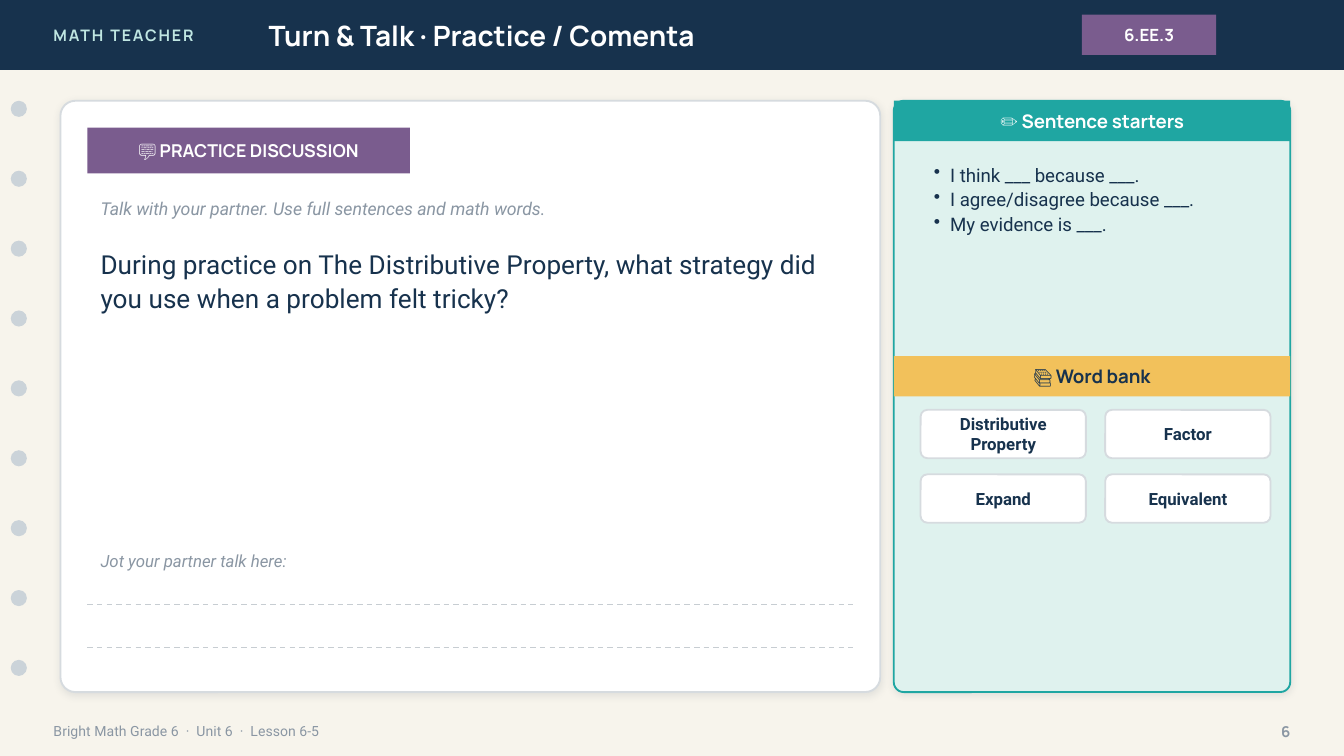
from lxml import etree
from pptx import Presentation
from pptx.dml.color import RGBColor
from pptx.enum import dml, shapes, text
from pptx.oxml import ns
from pptx.util import Pt

NAVY = RGBColor(0x17, 0x32, 0x4D)
CREAM = RGBColor(0xF7, 0xF4, 0xEC)
MINT = RGBColor(0xBF, 0xE6, 0xE2)
PALE = RGBColor(0xDF, 0xF2, 0xEE)
TEAL = RGBColor(0x1F, 0xA6, 0xA2)
PLUM = RGBColor(0x7A, 0x5C, 0x8E)
GOLD = RGBColor(0xF2, 0xC1, 0x5B)
WHITE = RGBColor(0xFF, 0xFF, 0xFF)
GRAY = RGBColor(0x8A, 0x96, 0xA3)
EDGE = RGBColor(0xD6, 0xDB, 0xDF)
RULE = RGBColor(0xC7, 0xCD, 0xD2)
DOT = RGBColor(0xCB, 0xD3, 0xD9)
HEAD, BODY = "Manrope", "Roboto"
RECT, ROUND, OVAL = (shapes.MSO_SHAPE.RECTANGLE, shapes.MSO_SHAPE.ROUNDED_RECTANGLE,
                     shapes.MSO_SHAPE.OVAL)
LEFT, MID, RIGHT = text.PP_ALIGN.LEFT, text.PP_ALIGN.CENTER, text.PP_ALIGN.RIGHT

# Content
BRAND = "MATH TEACHER"
TITLE = "Turn & Talk · Practice / Comenta"
CODE = "6.EE.3"
TAG = "💬 PRACTICE DISCUSSION"
HINT = "Talk with your partner. Use full sentences and math words."
PROMPT = ("During practice on The Distributive Property, "
          "what strategy did you use when a problem felt tricky?")
JOT = "Jot your partner talk here:"
STARTS = ["I think ___ because ___.", "I agree/disagree because ___.", "My evidence is ___."]
WORDS = ["Distributive Property", "Factor", "Expand", "Equivalent"]
FOOT = "Bright Math Grade 6  ·  Unit 6  ·  Lesson 6-5"
PAGE = "6"

# Layout: left, top, width, height
BAR = 37.44
CARD = (32.4, 54, 439.2, 316.8)
SIDE = (478.8, 54, 212.4, 316.8)
INSET = CARD[0] + 14.4
INNER = CARD[2] - 28.8

deck = Presentation()
deck.slide_width, deck.slide_height = Pt(720), Pt(405)
slide = deck.slides.add_slide(deck.slide_layouts[6])
slide.background.fill.solid()
slide.background.fill.fore_color.rgb = CREAM


def write(item, lines, size, color, face=BODY, bold=False, slant=False,
          align=LEFT, middle=True, space=None, bullet=False):
    frame = item.text_frame
    frame.word_wrap = True
    frame.vertical_anchor = text.MSO_ANCHOR.MIDDLE if middle else text.MSO_ANCHOR.TOP
    frame.text = "\n".join(lines)
    for para in frame.paragraphs:
        if bullet:
            props = para._p.get_or_add_pPr()
            props.set("marL", str(Pt(8.75)))
            props.set("indent", str(-Pt(8.75)))
            etree.SubElement(props, ns.qn("a:buChar"), char="•")
        para.alignment = align
        if space:
            para.line_spacing = space
        font = para.font
        font.name, font.size, font.bold, font.italic = face, Pt(size), bold, slant
        font.color.rgb = color
    return item


def label(box, lines, size, color, **style):
    return write(slide.shapes.add_textbox(*map(Pt, box)), lines, size, color, **style)


def block(kind, box, fill, edge=None, round_by=None):
    item = slide.shapes.add_shape(kind, *map(Pt, box))
    item.shadow.inherit = False
    item.fill.solid()
    item.fill.fore_color.rgb = fill
    if edge is None:
        item.line.fill.background()
    else:
        item.line.color.rgb = edge
        item.line.width = Pt(1)
    if round_by is not None:
        item.adjustments[0] = round_by
    return item


def banner(box, fill, words, size, color):
    write(block(RECT, box, fill), [words], size, color, face=HEAD, bold=True, align=MID)


def panel(box, fill, edge):
    item = block(ROUND, box, fill, edge, 8 / box[3])
    glow = item._element.spPr.find(ns.qn("a:effectLst"))
    cast = etree.SubElement(glow, ns.qn("a:outerShdw"), blurRad=str(Pt(4)),
                            dist=str(Pt(1)), dir="5400000", algn="bl", rotWithShape="0")
    tint = etree.SubElement(cast, ns.qn("a:srgbClr"), val="1C2E42")
    etree.SubElement(tint, ns.qn("a:alpha"), val="10000")


# Top bar
block(RECT, (0, 0, 720, BAR), NAVY)
brand = label((21.6, 0, 172.8, BAR), [BRAND], 8.5, MINT, face=HEAD, bold=True)
brand.text_frame.paragraphs[0].runs[0]._r.get_or_add_rPr().set("spc", "100")
label((136.8, 0, 403.2, BAR), [TITLE], 15, WHITE, face=HEAD, bold=True)
banner((579.6, 7.92, 72, 21.6), PLUM, CODE, 9, WHITE)

# Binder holes
for i in range(9):
    block(OVAL, (5.76, 54 + i * BAR, 8.64, 8.64), DOT)

# Footer
label((21.6, 381.6, 504, 20.16), [FOOT], 7.5, GRAY)
label((662.4, 381.6, 36, 20.16), [PAGE], 8, GRAY, face=HEAD, bold=True, align=RIGHT)

# Discussion card
panel(CARD, WHITE, EDGE)
banner((INSET, 68.4, 172.8, 24.48), PLUM, TAG, 9.5, WHITE)
label((INSET, 100.8, INNER, 21.6), [HINT], 9.5, GRAY, slant=True)
label((INSET, 128.16, INNER, 144), [PROMPT], 14, NAVY, middle=False, space=1.08)
label((INSET, 291.6, INNER, 18), [JOT], 9, GRAY, slant=True)
for y in (324, 347.04):
    rule = slide.shapes.add_connector(shapes.MSO_CONNECTOR.STRAIGHT,
                                      Pt(INSET), Pt(y), Pt(INSET + INNER), Pt(y))
    rule.line.color.rgb = RULE
    rule.line.width = Pt(0.75)
    rule.line.dash_style = dml.MSO_LINE.DASH
    etree.SubElement(rule._element.spPr, ns.qn("a:effectLst"))

# Support panel
left, top, width, _ = SIDE
panel(SIDE, PALE, TEAL)
banner((left, top, width, 21.6), TEAL, "✏️ Sentence starters", 10, WHITE)
label((left + 14.4, 82.8, 187.2, 100.8), STARTS, 10, NAVY,
      middle=False, space=1.1, bullet=True)
banner((left, 190.8, width, 21.6), GOLD, "📚 Word bank", 10, NAVY)

# Word chips, two per row
for i, word in enumerate(WORDS):
    row, col = divmod(i, 2)
    chip = block(ROUND, (left + 14.4 + col * 98.9, 219.6 + row * 34.56, 88.56, 25.92),
                 WHITE, EDGE, 0.14)
    write(chip, [word], 9, NAVY, bold=True, align=MID)

deck.save("out.pptx")
